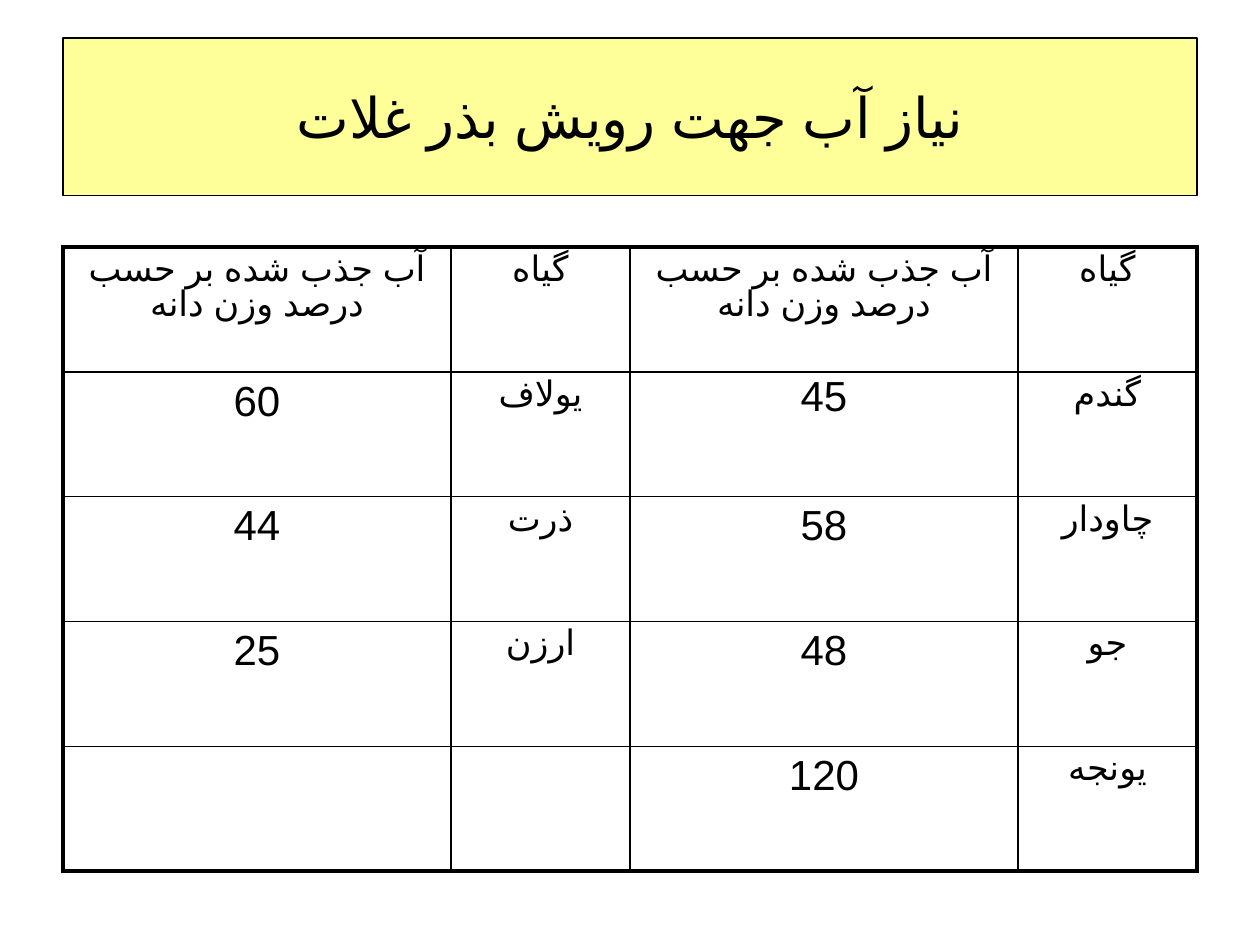
import dataclasses

import lxml.etree
import pptx
import pptx.dml.color
import pptx.enum.lang
import pptx.enum.text
import pptx.oxml.ns
import pptx.util

Cm = pptx.util.Cm
Pt = pptx.util.Pt
qn = pptx.oxml.ns.qn


@dataclasses.dataclass
class Theme:
    font: str = "Arial"
    ink: str = "000000"
    band: str = "FFFF99"
    head: int = 32
    word: int = 20
    num: int = 24
    thin: float = 1
    thick: float = 2.25


theme = Theme()


def style(para, size):
    """Centre a paragraph and set its runs as Persian in the theme font."""
    para.alignment = pptx.enum.text.PP_ALIGN.CENTER
    for run in para.runs:
        run.font.size = Pt(size)
        run.font.name = theme.font
        run.font.language_id = pptx.enum.lang.MSO_LANGUAGE_ID.FARSI
        run.font.color.rgb = pptx.dml.color.RGBColor.from_string(theme.ink)
        script = lxml.etree.SubElement(run.font._element, qn("a:cs"))
        script.set("typeface", theme.font)


def edge(cell, side, width):
    """Draw one border of a cell; call before the cell's fill is set."""
    line = lxml.etree.SubElement(cell._tc.get_or_add_tcPr(), qn("a:ln" + side))
    line.set("w", str(Pt(width)))
    fill = lxml.etree.SubElement(line, qn("a:solidFill"))
    lxml.etree.SubElement(fill, qn("a:srgbClr")).set("val", theme.ink)


deck = pptx.Presentation()
deck.slide_width = Cm(25.4)
deck.slide_height = Cm(19.05)
slide = deck.slides.add_slide(deck.slide_layouts[5])
left, width = Cm(1.27), Cm(22.86)

# Title band
title = slide.shapes.title
title.left, title.top, title.width, title.height = left, Cm(0.76), width, Cm(3.18)
title.fill.solid()
title.fill.fore_color.rgb = pptx.dml.color.RGBColor.from_string(theme.band)
title.line.color.rgb = pptx.dml.color.RGBColor.from_string(theme.ink)
title.line.width = Pt(theme.thin)
title.text_frame.text = "نیاز آب جهت رویش بذر غلات"
title.text_frame.vertical_anchor = pptx.enum.text.MSO_ANCHOR.MIDDLE
style(title.text_frame.paragraphs[0], theme.head)

# Water uptake table
water, plant = "آب جذب شده بر حسب درصد وزن دانه", "گیاه"
rows = [
    (water, plant, water, plant),
    ("60", "یولاف", "45", "گندم"),
    ("44", "ذرت", "58", "چاودار"),
    ("25", "ارزن", "48", "جو"),
    ("", "", "120", "یونجه"),
]
tall = Cm(12.58)
table = slide.shapes.add_table(
    len(rows), len(rows[0]), left, Cm(4.98), width, tall
).table
table.first_row = False
table.horz_banding = False
for col, wide in zip(table.columns, (7.82, 3.61) * 2):
    col.width = Cm(wide)

for r, row in enumerate(rows):
    table.rows[r].height = tall // len(rows)
    for c, text in enumerate(row):
        cell = table.cell(r, c)
        outer = {
            "L": c == 0,
            "R": c == len(row) - 1,
            "T": r == 0,
            "B": r == len(rows) - 1,
        }
        for side, rim in outer.items():
            edge(cell, side, theme.thick if rim else theme.thin)
        cell.fill.background()
        if not text:
            continue
        cell.text_frame.text = text
        para = cell.text_frame.paragraphs[0]
        digits = text.isdigit()
        style(para, theme.num if digits else theme.word)
        if not digits or text == "45":
            para._p.get_or_add_pPr().set("rtl", "1")
            para.line_spacing = 0.9

deck.save("out.pptx")
